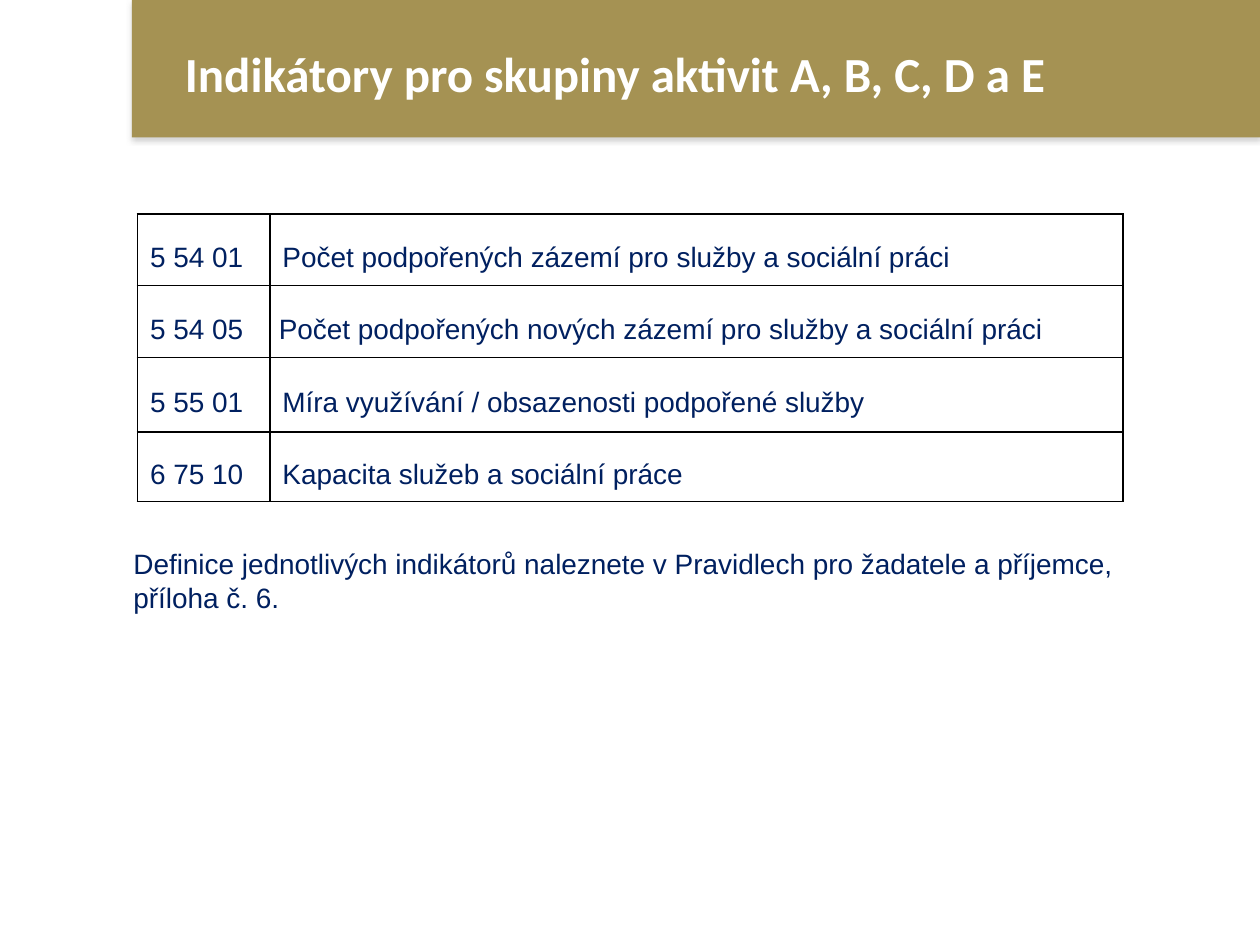
from dataclasses import dataclass

from lxml import etree
from pptx import Presentation
from pptx.dml.color import RGBColor
from pptx.enum.shapes import MSO_SHAPE
from pptx.enum.text import MSO_ANCHOR
from pptx.oxml import parse_xml
from pptx.oxml.ns import nsdecls
from pptx.util import Cm, Pt

RECTANGLE = MSO_SHAPE.RECTANGLE
MIDDLE = MSO_ANCHOR.MIDDLE
TOP = MSO_ANCHOR.TOP


@dataclass(frozen=True)
class Theme:
    gold: str = "A59253"
    navy: str = "002060"
    white: str = "FFFFFF"
    border: str = "000000"
    shadow: str = "808080"
    title_font: str = "Calibri"
    body_font: str = "Arial"
    title_size: int = 28
    body_size: int = 16


class SlideBuilder:
    def __init__(self, s, theme):
        self.s = s
        self.theme = theme

    def set_text(self, tf, text, title=False, spacing=1.0):
        t = self.theme
        p = tf.paragraphs[0]
        p.text = text
        p.line_spacing = spacing
        p.font.name = t.title_font if title else t.body_font
        p.font.size = Pt(t.title_size if title else t.body_size)
        p.font.bold = title
        p.font.color.rgb = RGBColor.from_string(t.white if title else t.navy)

    def band(self, left, top, width, height):
        """Filled header band with a soft shadow below it."""
        sp = self.s.shapes.add_shape(RECTANGLE, Cm(left), Cm(top), Cm(width), Cm(height))
        sp.fill.solid()
        sp.fill.fore_color.rgb = RGBColor.from_string(self.theme.gold)
        sp.line.fill.background()
        sp.shadow.inherit = False
        effects = sp.element.spPr.find("{*}effectLst")
        effects.append(parse_xml(
            f'<a:outerShdw {nsdecls("a")} blurRad="{Pt(3.1)}" dist="{Pt(1.8)}" dir="5400000" '
            f'rotWithShape="0"><a:srgbClr val="{self.theme.shadow}">'
            '<a:alpha val="35000"/></a:srgbClr></a:outerShdw>'))

    def text(self, left, top, width, height, text, anchor=TOP, **style):
        tf = self.s.shapes.add_textbox(Cm(left), Cm(top), Cm(width), Cm(height)).text_frame
        tf.word_wrap = True
        tf.vertical_anchor = anchor
        self.set_text(tf, text, **style)

    def cell_borders(self, cell):
        """Border lines go before the fill in the cell properties."""
        tc_pr = cell._tc.get_or_add_tcPr()
        for i, side in enumerate(("lnL", "lnR", "lnT", "lnB")):
            ln = parse_xml(f'<a:{side} {nsdecls("a")} w="{Pt(1)}"/>')
            fill = etree.SubElement(ln, ln.tag.replace(side, "solidFill"))
            etree.SubElement(fill, ln.tag.replace(side, "srgbClr"), val=self.theme.border)
            tc_pr.insert(i, ln)

    def table(self, left, top, widths, heights, rows):
        table = self.s.shapes.add_table(
            len(rows), len(widths), Cm(left), Cm(top), Cm(sum(widths)), Cm(sum(heights))).table
        table.first_row = table.horz_banding = False
        for column, width in zip(table.columns, widths):
            column.width = Cm(width)
        for row, height, values in zip(table.rows, heights, rows):
            row.height = Cm(height)
            for cell, value in zip(row.cells, values):
                cell.vertical_anchor = MIDDLE
                cell.fill.background()
                self.cell_borders(cell)
                self.set_text(cell.text_frame, value, spacing=1.5)
        return table


def main():
    prs = Presentation()
    prs.slide_width, prs.slide_height = Cm(25.4), Cm(19.05)
    slide = SlideBuilder(prs.slides.add_slide(prs.slide_layouts[6]), Theme())

    slide.band(2.66, 0, 22.74, 2.77)
    slide.text(3.48, 0.15, 21.18, 2.8, "Indikátory pro skupiny aktivit A, B, C, D a E",
               anchor=MIDDLE, title=True, spacing=0.9)

    indicators = [
        ("5 54 01", "Počet podpořených zázemí pro služby a sociální práci"),
        ("5 54 05", "Počet podpořených nových zázemí pro služby a sociální práci"),
        ("5 55 01", "Míra využívání / obsazenosti podpořené služby"),
        ("6 75 10", "Kapacita služeb a sociální práce"),
    ]
    table = slide.table(2.77, 4.31, (2.67, 17.2), (1.45, 1.45, 1.5, 1.4), indicators)
    new_facilities = table.cell(1, 1)
    new_facilities.margin_left = new_facilities.margin_right = Cm(0.18)
    new_facilities.margin_top = new_facilities.margin_bottom = 0

    slide.text(2.44, 10.9, 20.55, 1.63,
               "Definice jednotlivých indikátorů naleznete v Pravidlech pro žadatele "
               "a příjemce, příloha č. 6.")
    prs.save("out.pptx")


if __name__ == "__main__":
    main()
